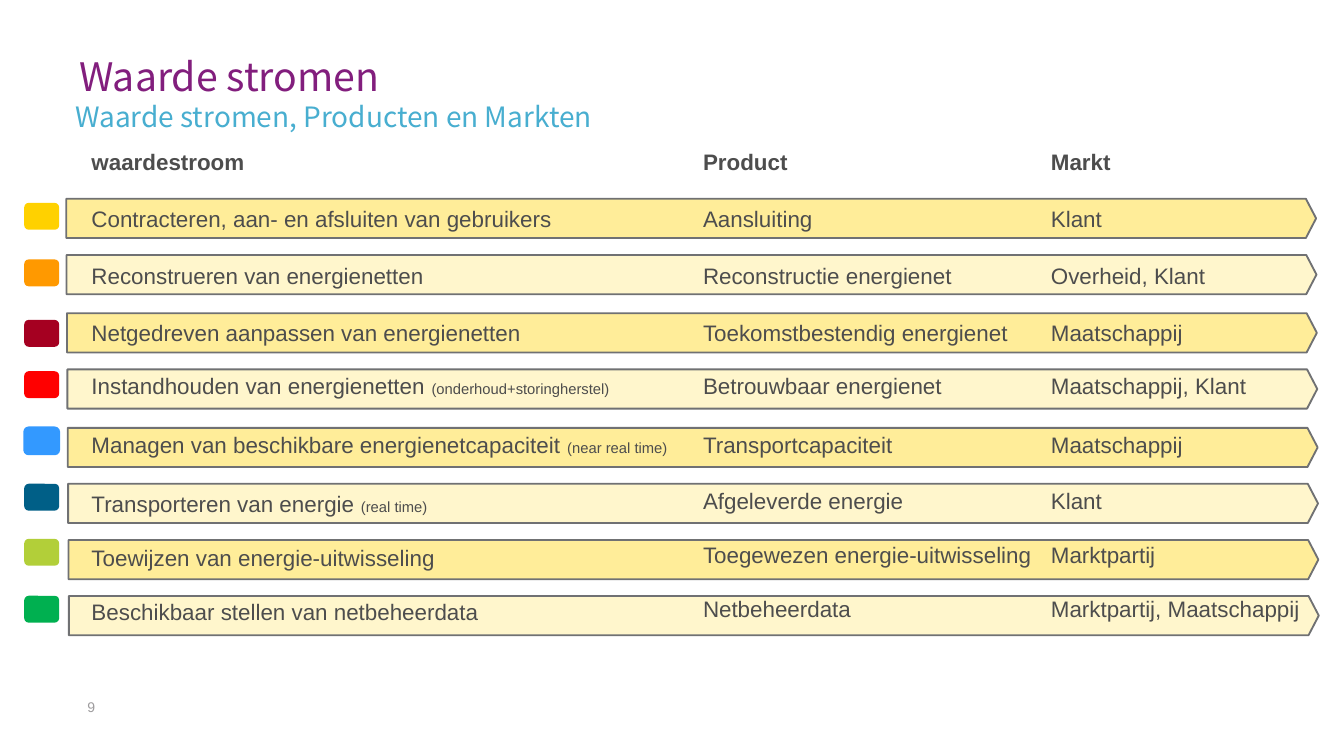
from pptx import Presentation
from pptx.dml.color import RGBColor
from pptx.enum.shapes import MSO_SHAPE
from pptx.util import Pt

PENTAGON = MSO_SHAPE.PENTAGON
ROUNDED = MSO_SHAPE.ROUNDED_RECTANGLE

BODY_FONT = "Arial"
TITLE_FONT = "Noto Sans CJK TC"
TEXT_COLOR = "4D4D4D"
BAR_LINE = "707173"
BAR_FILLS = ["FFED99", "FFF6CC"]
BLUE = "3399FF"

# value stream, remark, product, market
HEADERS = ("waardestroom", "", "Product", "Markt")
STREAMS = [
    ("Contracteren, aan- en afsluiten van gebruikers", "", "Aansluiting", "Klant"),
    ("Reconstrueren van energienetten", "", "Reconstructie energienet", "Overheid, Klant"),
    ("Netgedreven aanpassen van energienetten", "", "Toekomstbestendig energienet", "Maatschappij"),
    ("Instandhouden van energienetten", "(onderhoud+storingherstel)", "Betrouwbaar energienet",
     "Maatschappij, Klant"),
    ("Managen van beschikbare energienetcapaciteit", "(near real time)", "Transportcapaciteit",
     "Maatschappij"),
    ("Transporteren van energie", "(real time)", "Afgeleverde energie", "Klant"),
    ("Toewijzen van energie-uitwisseling", "", "Toegewezen energie-uitwisseling", "Marktpartij"),
    ("Beschikbaar stellen van netbeheerdata", "", "Netbeheerdata", "Marktpartij, Maatschappij"),
]

# bar top, swatch top, swatch colour
BARS = [
    (106.5, 108.7, "FFD100"),
    (136.6, 139, "FF9900"),
    (167.8, 171.4, "A50021"),
    (197.9, 198.9, "FF0000"),
    (229.2, 229, BLUE),
    (259.2, 259.2, "005F87"),
    (289.3, 288.7, "B2CF39"),
    (319.3, 319.2, "00B050"),
]
BAR_LEFT, BAR_SHIFT, BAR_WIDTH, BAR_HEIGHT = 35.5, 0.2, 669.6, 21

# Space before and after each row of text, header first
SPACE_BEFORE = [0, 4.5, 4.5, 4.5, 4.5, 8, 4, 3, 3]
SPACE_AFTER = [4.5, 4.5, 4.5, 2, 2, 4.5, 4.5, 4.5, 4.5]
STREAM_BEFORE = SPACE_BEFORE[:6] + [8, 3, 3]
STREAM_AFTER = SPACE_AFTER[:5] + [2, 4.5, 4.5, 4.5]

# index in a row, left, width, space before, space after
COLUMNS = [
    (2, 376.6, 254, SPACE_BEFORE, SPACE_AFTER),
    (0, 49, 530, STREAM_BEFORE, STREAM_AFTER),
    (3, 563, 142, SPACE_BEFORE, SPACE_AFTER),
]
COLUMN_TOP, COLUMN_HEIGHT = 72, 268.6


def color(value):
    return RGBColor.from_string(value)


def set_font(font, name, size, value, bold=False):
    font.name = name
    font.size = Pt(size)
    font.color.rgb = color(value)
    font.bold = bold


def add_text_frame(slide, left, top, width, height):
    """Add a wrapping text box without margins and return its text frame."""
    frame = slide.shapes.add_textbox(Pt(left), Pt(top), Pt(width), Pt(height)).text_frame
    frame.word_wrap = True
    frame.margin_left = frame.margin_top = frame.margin_right = frame.margin_bottom = 0
    return frame


def add_line_of_text(slide, box, text, name, size, value, line_spacing=1.0):
    paragraph = add_text_frame(slide, *box).paragraphs[0]
    paragraph.text = text
    paragraph.line_spacing = line_spacing
    set_font(paragraph.font, name, size, value)


def add_filled_shape(slide, kind, box, fill, line=None):
    shape = slide.shapes.add_shape(kind, *(Pt(length) for length in box))
    shape.shadow.inherit = False
    shape.fill.solid()
    shape.fill.fore_color.rgb = color(fill)
    if line:
        shape.line.color.rgb = color(line)
        shape.line.width = Pt(1)
    else:
        shape.line.fill.background()
    return shape


def add_column(slide, index, left, width, before, after):
    frame = add_text_frame(slide, left, COLUMN_TOP, width, COLUMN_HEIGHT)
    for number, row in enumerate([HEADERS] + STREAMS):
        paragraph = frame.add_paragraph() if number else frame.paragraphs[0]
        paragraph.line_spacing = 1.5
        paragraph.space_before = Pt(before[number])
        paragraph.space_after = Pt(after[number])
        set_font(paragraph.font, BODY_FONT, 12, TEXT_COLOR, bold=number == 0)
        remark = row[1] if index == 0 else ""
        paragraph.add_run().text = row[index] + (" " if remark else "")
        if remark:
            run = paragraph.add_run()
            run.text = remark
            run.font.size = Pt(7.9)


def main():
    presentation = Presentation()
    presentation.slide_width = Pt(720)
    presentation.slide_height = Pt(405)
    slide = presentation.slides.add_slide(presentation.slide_layouts[6])

    add_line_of_text(slide, (46.8, 374.4, 28, 17), "9", BODY_FONT, 7.5, "9E9C9E")

    for number, (bar_top, swatch_top, swatch_color) in enumerate(BARS):
        bar_box = (BAR_LEFT + BAR_SHIFT * number, bar_top, BAR_WIDTH, BAR_HEIGHT)
        bar = add_filled_shape(slide, PENTAGON, bar_box, BAR_FILLS[number % 2], BAR_LINE)
        bar.adjustments[0] = 0.26
        outline = BLUE if swatch_color == BLUE else None
        add_filled_shape(slide, ROUNDED, (13, swatch_top, 18.7, 14.4), swatch_color, outline)

    for column in COLUMNS:
        add_column(slide, *column)

    add_line_of_text(slide, (42.5, 25.2, 524, 28), "Waarde stromen",
                     TITLE_FONT, 21, "821E7D", Pt(28))
    add_line_of_text(slide, (40.3, 49.7, 599, 17.3), "Waarde stromen, Producten en Markten",
                     TITLE_FONT, 15, "48AED0", 1.2)

    presentation.save("out.pptx")


if __name__ == "__main__":
    main()
